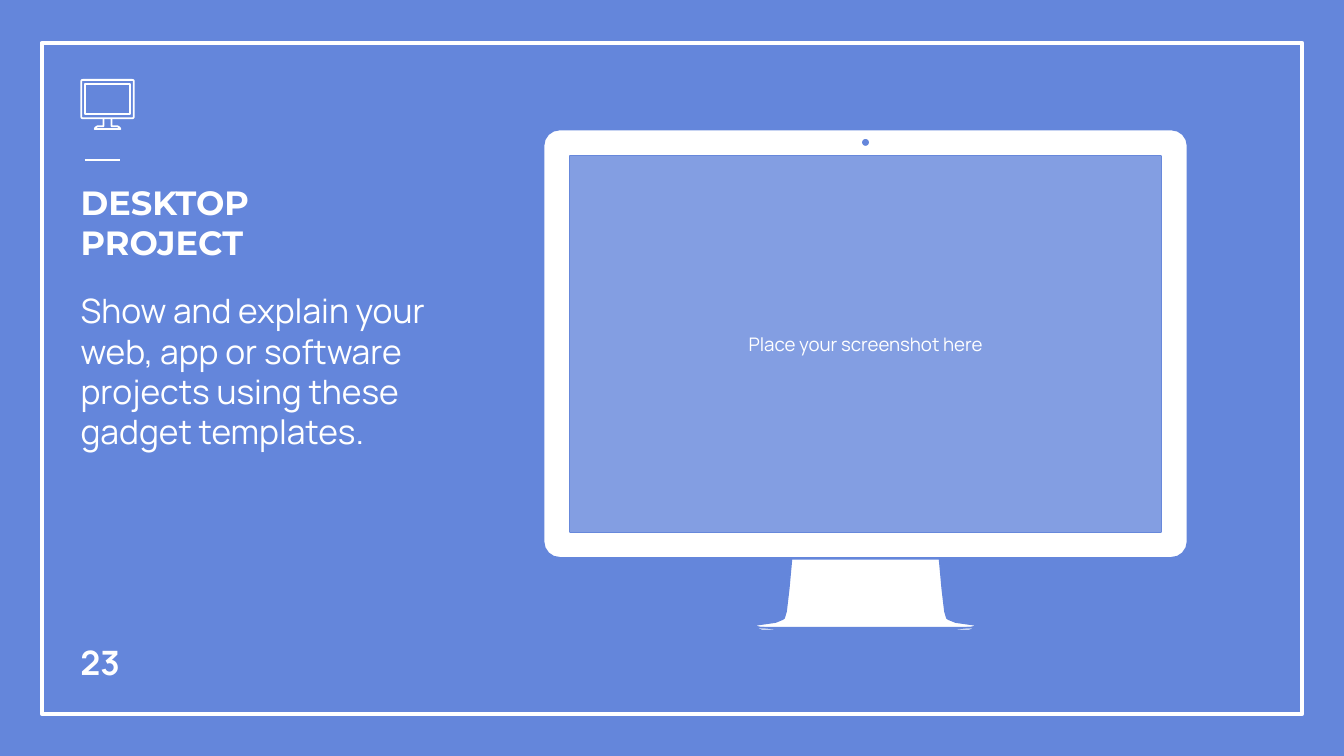
from dataclasses import dataclass
from math import cos, pi, sin

from lxml.etree import SubElement
from pptx import Presentation
from pptx.dml.color import RGBColor
from pptx.enum.shapes import MSO_CONNECTOR as Connector, MSO_SHAPE as Preset
from pptx.enum.text import MSO_ANCHOR as Anchor, MSO_AUTO_SIZE as AutoSize, PP_ALIGN as Align
from pptx.oxml.ns import qn
from pptx.util import Inches, Pt

COLUMNS = 100
ROWS = 56.25
CELL = Inches(10) / COLUMNS
BLUE = "6486DB"
WHITE = "FFFFFF"
SECTION_LAYOUT = 2

Point = tuple[float, float]
Contour = list[Point]


@dataclass
class Area:
    column: float
    row: float
    columns: float
    rows: float

    def emu(self) -> list[int]:
        return [cells(n) for n in (self.column, self.row, self.columns, self.rows)]


@dataclass
class TextStyle:
    size: float
    font: str = "Manrope"
    bold: bool = False
    align: Align = Align.LEFT
    anchor: Anchor = Anchor.TOP


def cells(count: float) -> int:
    return round(count * CELL)


def colour(value: str) -> RGBColor:
    return RGBColor.from_string(value)


def write(shape, text: str, style: TextStyle) -> None:
    frame = shape.text_frame
    frame.word_wrap = True
    frame.auto_size = AutoSize.NONE
    frame.vertical_anchor = style.anchor
    frame.margin_left = frame.margin_right = cells(1)
    frame.margin_top = frame.margin_bottom = cells(1)
    paragraph = frame.paragraphs[0]
    paragraph.alignment = style.align
    paragraph.space_before = Pt(0)
    run = paragraph.add_run()
    run.text = text
    run.font.name = style.font
    run.font.size = Pt(style.size)
    run.font.bold = style.bold
    run.font.color.rgb = colour(WHITE)


def paint(shape, fill: str | None, line: str | None, width: float = 0.75) -> None:
    shape.shadow.inherit = False
    if fill:
        shape.fill.solid()
        shape.fill.fore_color.rgb = colour(fill)
    else:
        shape.fill.background()
    if line:
        shape.line.color.rgb = colour(line)
        shape.line.width = Pt(width)
    else:
        shape.line.fill.background()


def place(shape, area: Area) -> None:
    shape.left, shape.top, shape.width, shape.height = area.emu()


def rounded(area: Area, radius: float, steps: int = 4) -> Contour:
    right = area.column + area.columns - radius
    bottom = area.row + area.rows - radius
    left, top = area.column + radius, area.row + radius
    corners = [(right, bottom), (left, bottom), (left, top), (right, top)]
    return [
        (x + radius * cos(angle), y + radius * sin(angle))
        for quarter, (x, y) in enumerate(corners)
        for angle in ((quarter + step / steps) * pi / 2 for step in range(steps + 1))
    ]


def symmetric(left_half: Contour, axis: float) -> Contour:
    return left_half + [(2 * axis - x, y) for x, y in reversed(left_half)]


def add_outline(shapes, contours: list[Contour], close: bool = True):
    paths = [[(cells(x), cells(y)) for x, y in contour] for contour in contours]
    builder = shapes.build_freeform(*paths[0][0], scale=1.0)
    for path in paths:
        builder.move_to(*path[0])
        builder.add_line_segments(path[1:], close=close)
    return builder.convert_to_shape()


def add_monitor(shapes) -> None:
    axis = 64.4
    screen = Area(42.4, 11.6, 44, 28)
    neck = [(58.9, 41.6), (58.7, 43.8), (58.5, 45.5), (58.35, 46), (58.2, 46.1),
            (57.7, 46.3), (56.3, 46.5), (56.2, 46.6), (56.6, 46.7), (59.2, 46.7)]
    base = [(61.3, 46.8), (57.8, 46.8), (56.8, 46.7), (56.3, 46.7),
            (56.3, 46.8), (56.7, 46.9), (61.3, 46.9)]
    body = add_outline(shapes, [
        rounded(Area(40.45, 9.65, 47.9, 31.85), 1.2),
        rounded(screen, 0),
        rounded(Area(axis - 0.2, 10.4, 0.4, 0.4), 0.2),
        symmetric(neck, axis),
        symmetric(base, axis),
    ])
    paint(body, WHITE, BLUE)

    glass = shapes.add_shape(Preset.RECTANGLE, *screen.emu())
    paint(glass, WHITE, None)
    fill_colour = glass.fill._xPr.find(qn("a:solidFill"))[0]
    SubElement(fill_colour, qn("a:alpha"), val="20000")
    write(glass, "Place your screenshot here",
          TextStyle(10, align=Align.CENTER, anchor=Anchor.MIDDLE))


def add_icon(shapes) -> None:
    group = shapes.add_group_shape()
    stand = [(7.7, 8.8), (7.7, 9.4), (7.25, 9.4), (7.1, 9.5), (7.05, 9.6)]
    display = [rounded(Area(6.05, 5.95, 3.9, 2.85), 0.1),
               rounded(Area(6.35, 6.25, 3.3, 2.25), 0)]
    for contours, close in (([symmetric(stand, 8)], False), (display, True)):
        paint(add_outline(group.shapes, contours, close), None, WHITE, 0.96)


def add_rule(shapes, start: Point, end: Point) -> None:
    rule = shapes.add_connector(Connector.STRAIGHT, *map(cells, start + end))
    rule.line.color.rgb = colour(WHITE)
    rule.line.width = Pt(0.75)
    SubElement(rule._element.spPr, qn("a:effectLst"))


def main() -> None:
    presentation = Presentation()
    presentation.slide_width = cells(COLUMNS)
    presentation.slide_height = cells(ROWS)
    slide = presentation.slides.add_slide(presentation.slide_layouts[SECTION_LAYOUT])
    slide.background.fill.solid()
    slide.background.fill.fore_color.rgb = colour(BLUE)
    shapes = slide.shapes

    border = shapes.add_shape(Preset.RECTANGLE, *Area(3.1, 3.2, 93.8, 49.9).emu())
    paint(border, None, WHITE, 2.25)
    add_rule(shapes, (6.3, 11.9), (8.9, 11.9))
    add_monitor(shapes)

    number = shapes.add_textbox(*Area(5, 45.8, 6, 6).emu())
    write(number, "23", TextStyle(18, bold=True, anchor=Anchor.BOTTOM))

    title, body = shapes.title, slide.placeholders[1]
    place(title, Area(5, 12.5, 23.6, 8.9))
    write(title, "DESKTOP PROJECT", TextStyle(18, "Montserrat", bold=True))
    place(body, Area(5, 20.6, 32.2, 28.2))
    write(body, "Show and explain your web, app or software projects "
                "using these gadget templates.", TextStyle(18))
    add_icon(shapes)

    presentation.save("out.pptx")


if __name__ == "__main__":
    main()
